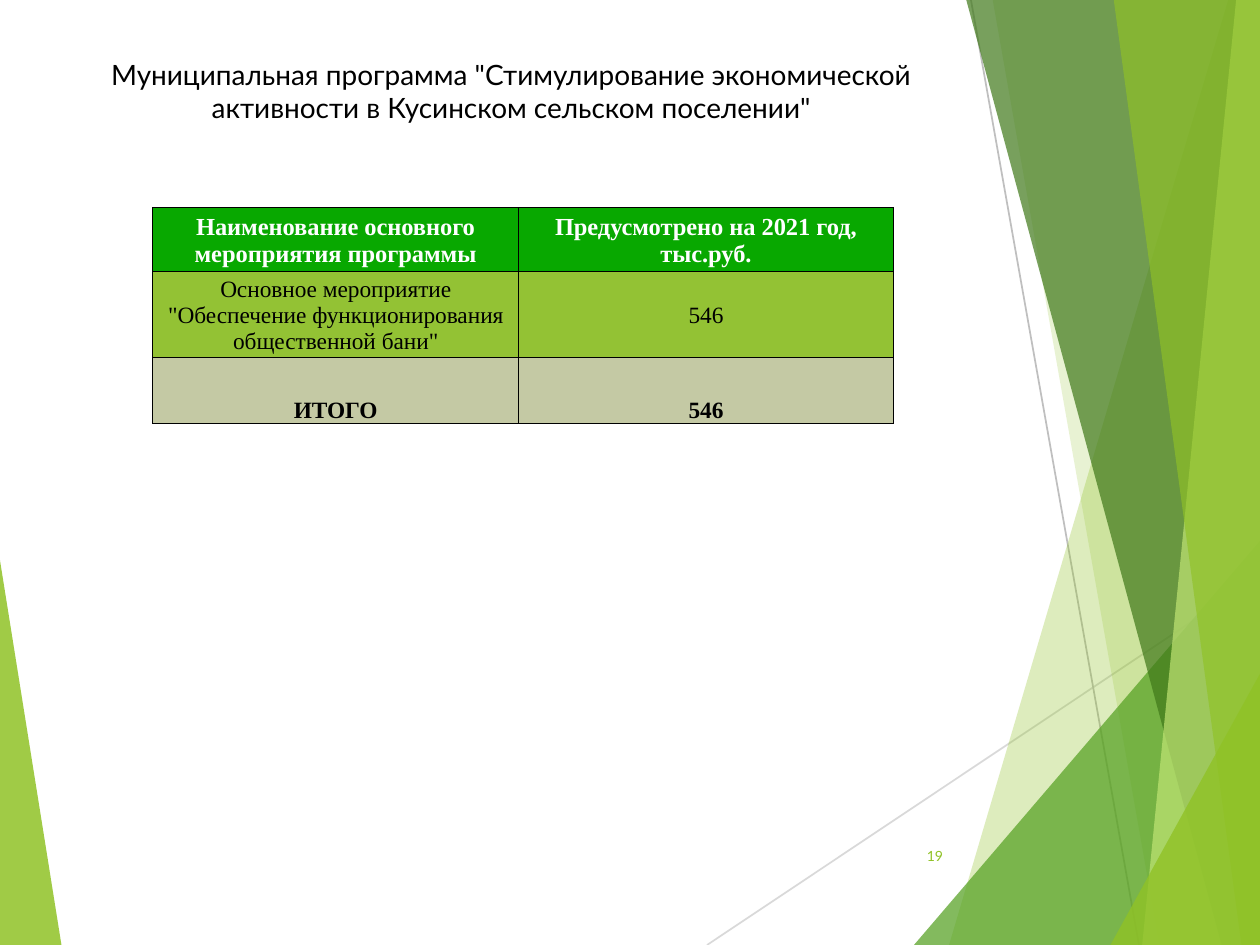
from lxml.etree import SubElement as Sub
from pptx import Presentation
from pptx.dml.color import RGBColor
from pptx.enum.shapes import MSO_CONNECTOR as Link
from pptx.enum.text import MSO_ANCHOR as Anchor, PP_ALIGN as Align
from pptx.oxml import parse_xml
from pptx.oxml.ns import nsdecls, qn
from pptx.util import Cm, Pt

LIME = RGBColor(0x90, 0xC2, 0x26)
GREEN = RGBColor(0x54, 0xA0, 0x21)
DARK = RGBColor(0x3F, 0x78, 0x19)
PALE = RGBColor(0xC0, 0xE4, 0x74)
SILVER = RGBColor(0xD9, 0xD9, 0xD9)
GRAY = RGBColor(0xBF, 0xBF, 0xBF)
BLACK = RGBColor(0, 0, 0)
WHITE = RGBColor(0xFF, 0xFF, 0xFF)
HEAD = RGBColor(0x08, 0xA8, 0x00)
BODY = RGBColor(0x93, 0xC2, 0x34)
TOTAL = RGBColor(0xC4, 0xC9, 0xA4)
WIDE, HIGH = 19.05, 14.29


class Page:
    """Draws styled elements on one slide."""

    sans, serif = "Lato", "Times New Roman"

    def __init__(self, deck):
        self.slide = deck.slides.add_slide(deck.slide_layouts[6])
        self.shapes = self.slide.shapes

    def facet(self, points, color, alpha):
        (x, y), *rest = [(Cm(x), Cm(y)) for x, y in points]
        pen = self.shapes.build_freeform(x, y)
        pen.add_line_segments(rest, close=True)
        shape = pen.convert_to_shape()
        shape.shadow.inherit = False
        shape.line.fill.background()
        shape.fill.solid()
        shape.fill.fore_color.rgb = color
        tone = shape._element.spPr.find(qn("a:solidFill"))[0]
        Sub(tone, qn("a:alpha"), val=str(alpha * 1000))

    def line(self, start, end, color):
        ends = [Cm(v) for v in (*start, *end)]
        line = self.shapes.add_connector(Link.STRAIGHT, *ends)
        line.line.color.rgb = color
        line.line.width = Pt(0.75)
        Sub(line._element.spPr, qn("a:effectLst"))

    def label(self, frame, text, size, font, color, align, bold=False):
        frame.text = text
        for para in frame.paragraphs:
            para.alignment = align
            for run in para.runs:
                run.font.name = font
                run.font.size = Pt(size)
                run.font.bold = bold
                run.font.color.rgb = color

    def text(self, box, text, size, color, align, anchor):
        frame = self.shapes.add_textbox(*map(Cm, box)).text_frame
        frame.word_wrap = True
        frame.vertical_anchor = anchor
        self.label(frame, text, size, self.sans, color, align)

    def table(self, left, top, cols, rows):
        size = Cm(sum(cols)), Cm(sum(row[0] for row in rows))
        table = self.shapes.add_table(
            len(rows), len(cols), Cm(left), Cm(top), *size).table
        table.first_row = table.horz_banding = False
        for col, width in zip(table.columns, cols):
            col.width = Cm(width)
        for line, (high, fill, color, pts, bold, anchor, texts) in zip(table.rows, rows):
            line.height = Cm(high)
            for cell, text in zip(line.cells, texts):
                cell.margin_left = cell.margin_right = cell.margin_top = Cm(0.03)
                cell.margin_bottom = 0
                cell.vertical_anchor = anchor
                cell.fill.solid()
                cell.fill.fore_color.rgb = fill
                self.label(cell.text_frame, text, pts, self.serif, color,
                           Align.CENTER, bold)
                self.edge(cell)

    def edge(self, cell):
        props = cell._tc.get_or_add_tcPr()
        for spot, side in enumerate("LRTB"):
            props.insert(spot, parse_xml(
                f'<a:ln{side} {nsdecls("a")} w="{Pt(0.5)}"><a:solidFill>'
                f'<a:srgbClr val="{BLACK}"/></a:solidFill></a:ln{side}>'))


def band(top, foot):
    return [(top, 0), (foot, HIGH), (WIDE, HIGH), (WIDE, 0)]


def wedge(foot, top):
    return [(foot, HIGH), (WIDE, top), (WIDE, HIGH)]


def main():
    deck = Presentation()
    deck.slide_width, deck.slide_height = Cm(WIDE), Cm(HIGH)
    page = Page(deck)

    page.facet([(0, 8.47), (0.93, HIGH), (0, HIGH)], LIME, 85)
    page.line((10.69, HIGH), (WIDE, 8.71), SILVER)
    page.line((14.68, 0), (17.22, HIGH), GRAY)
    for points, color, alpha in [
        (band(18.57, 14.35), LIME, 30),
        (band(15.01, 17.53), LIME, 20),
        (wedge(13.82, 8.18), GREEN, 72),
        (band(14.61, 18.47), DARK, 70),
        (band(18.69, 17.27), PALE, 70),
        (band(16.84, 18.77), LIME, 65),
        (wedge(16.79, 10.19), LIME, 80),
    ]:
        page.facet(points, color, alpha)

    page.text((1.12, 0.74, 13.23, 1.47),
              'Муниципальная программа "Стимулирование экономической '
              'активности в Кусинском сельском поселении"',
              12, BLACK, Align.CENTER, Anchor.TOP)
    page.text((13.44, 12.57, 1.07, 0.76), "19", 6, LIME, Align.RIGHT, Anchor.MIDDLE)
    page.table(2.31, 3.14, (5.53, 5.67), [
        (0.97, HEAD, WHITE, 10.5, True, Anchor.MIDDLE,
         ("Наименование основного мероприятия программы",
          "Предусмотрено на 2021 год, тыс.руб.")),
        (1.09, BODY, BLACK, 10, False, Anchor.MIDDLE,
         ('Основное мероприятие "Обеспечение функционирования общественной бани"',
          "546")),
        (0.99, TOTAL, BLACK, 10, True, Anchor.BOTTOM, ("ИТОГО", "546")),
    ])
    deck.save("out.pptx")


if __name__ == "__main__":
    main()
